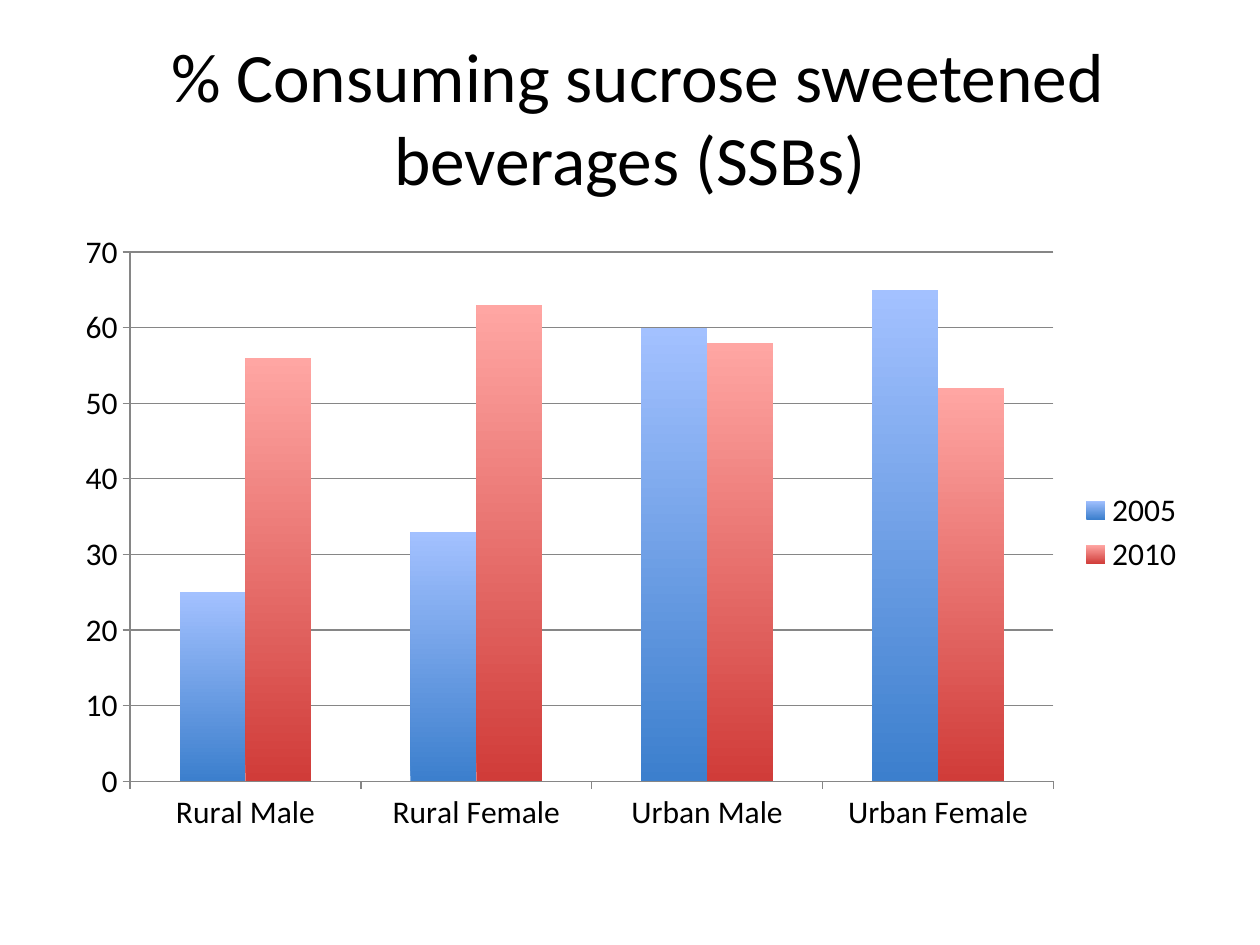
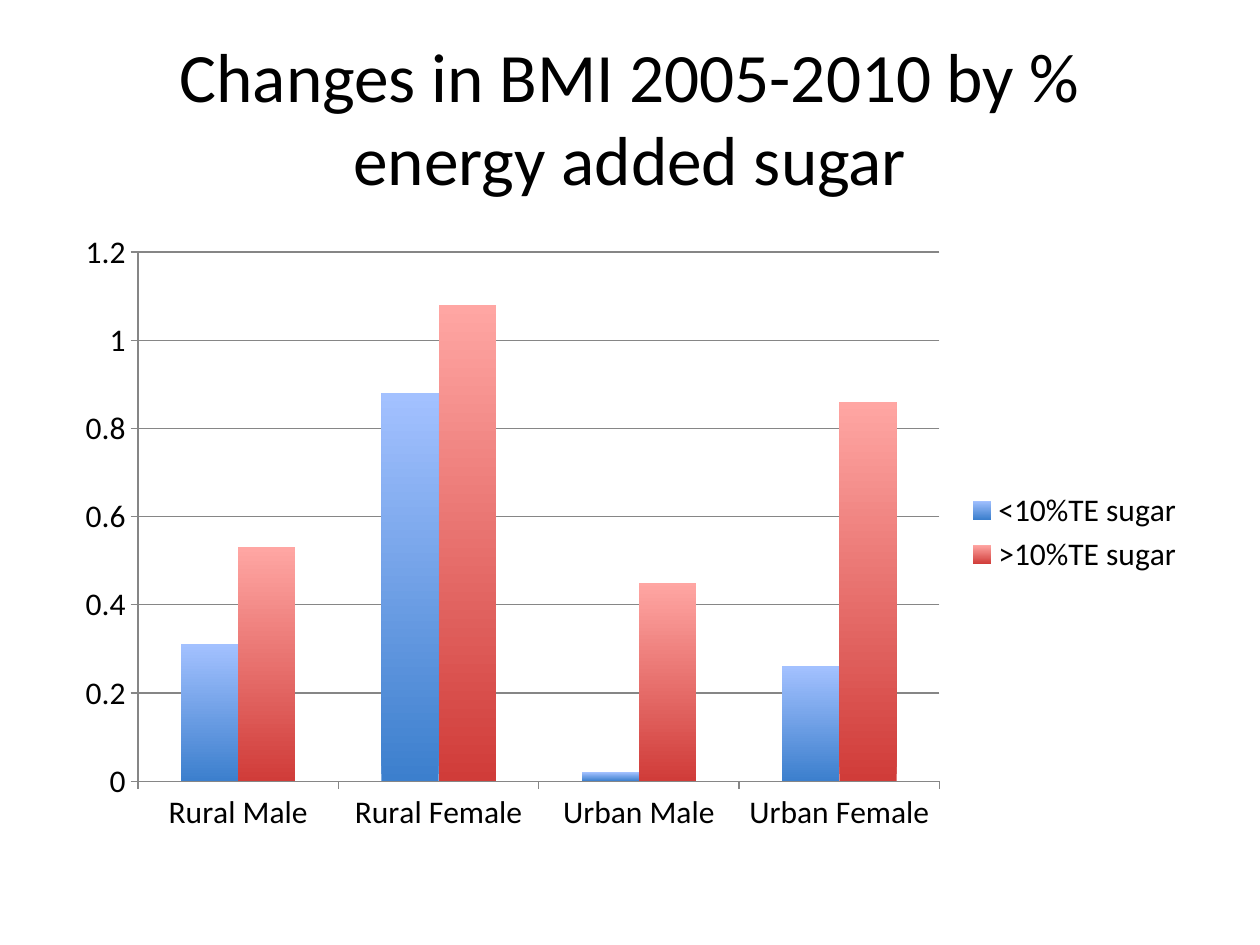
from pptx import Presentation
from pptx.chart.data import CategoryChartData
from pptx.dml.color import RGBColor
from pptx.enum.chart import XL_CHART_TYPE, XL_LEGEND_POSITION, XL_TICK_MARK
from pptx.enum.text import MSO_ANCHOR, MSO_AUTO_SIZE, PP_ALIGN
from pptx.util import Pt

FONT = "Calibri"
BLACK = RGBColor(0x00, 0x00, 0x00)
AXIS_GREY = RGBColor(0x86, 0x86, 0x86)
BLUE_TOP = RGBColor(0xA3, 0xC1, 0xFF)
BLUE_BOTTOM = RGBColor(0x3C, 0x7F, 0xCD)
RED_TOP = RGBColor(0xFF, 0xA6, 0xA3)
RED_BOTTOM = RGBColor(0xD0, 0x3C, 0x39)
COLUMN_GRADIENTS = [(BLUE_BOTTOM, BLUE_TOP), (RED_BOTTOM, RED_TOP)]

TITLE_BOX = (Pt(36), Pt(21.6), Pt(648), Pt(90))
CHART_BOX = (Pt(36), Pt(126), Pt(648), Pt(356.4))
GROUPS = ["Rural Male", "Rural Female", "Urban Male", "Urban Female"]

SLIDES = [
    (" % Consuming sucrose sweetened beverages (SSBs)",
     {"2005": (25, 33, 60, 65), "2010": (56, 63, 58, 52)}),
    ("Changes in BMI 2005-2010 by % energy added sugar",
     {"<10%TE sugar": (0.31, 0.88, 0.02, 0.26),
      ">10%TE sugar": (0.53, 1.08, 0.45, 0.86)}),
]


def style_font(font, size):
    font.name = FONT
    font.size = Pt(size)
    font.color.rgb = BLACK


def style_line(line):
    line.color.rgb = AXIS_GREY
    line.width = Pt(0.75)


def fill_title(title, box, wording):
    title.left, title.top, title.width, title.height = box
    frame = title.text_frame
    frame.text = wording
    frame.word_wrap = True
    frame.auto_size = MSO_AUTO_SIZE.NONE
    frame.vertical_anchor = MSO_ANCHOR.MIDDLE
    heading = frame.paragraphs[0]
    heading.alignment = PP_ALIGN.CENTER
    style_font(heading.runs[0].font, 39.6)


def add_column_chart(slide, box, series_values):
    data = CategoryChartData()
    data.categories = GROUPS
    for name, values in series_values.items():
        data.add_series(name, values)
    chart = slide.shapes.add_chart(
        XL_CHART_TYPE.COLUMN_CLUSTERED, *box, data).chart
    chart.has_title = False
    style_font(chart.font, 18)

    chart.has_legend = True
    chart.legend.position = XL_LEGEND_POSITION.RIGHT
    chart.legend.include_in_layout = False

    for axis in (chart.category_axis, chart.value_axis):
        axis.major_tick_mark = XL_TICK_MARK.OUTSIDE
        axis.minor_tick_mark = XL_TICK_MARK.NONE
        style_line(axis.format.line)
    chart.value_axis.has_major_gridlines = True
    style_line(chart.value_axis.major_gridlines.format.line)

    plot = chart.plots[0]
    plot.gap_width = 150
    plot.vary_by_categories = False
    for series, gradient in zip(plot.series, COLUMN_GRADIENTS):
        fill = series.format.fill
        fill.gradient()
        fill.gradient_angle = 90
        for stop, colour in zip(fill.gradient_stops, gradient):
            stop.color.rgb = colour


def add_chart_slide(deck, wording, series_values):
    slide = deck.slides.add_slide(deck.slide_layouts[5])
    fill_title(slide.shapes.title, TITLE_BOX, wording)
    add_column_chart(slide, CHART_BOX, series_values)


def main():
    deck = Presentation()
    deck.slide_width, deck.slide_height = Pt(720), Pt(540)
    for wording, series_values in SLIDES:
        add_chart_slide(deck, wording, series_values)
    deck.save("out.pptx")


if __name__ == "__main__":
    main()
